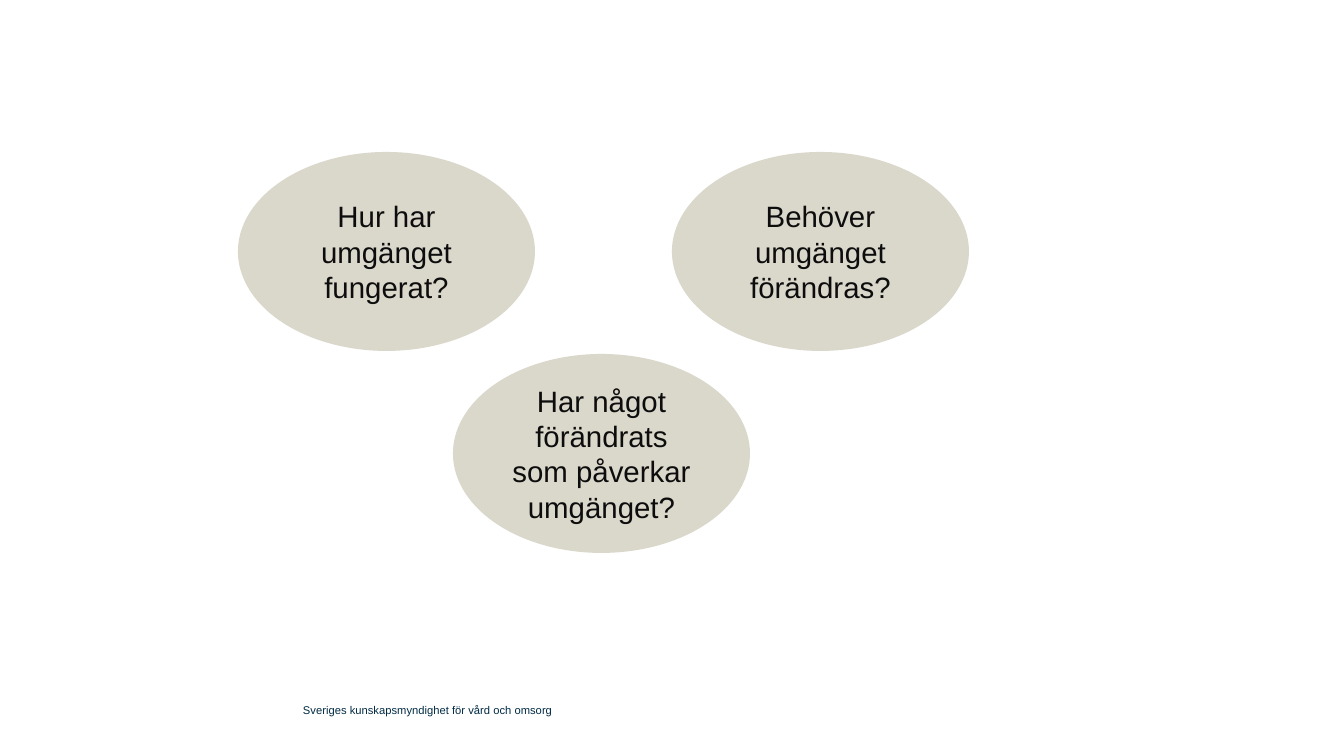
from pptx import Presentation
from pptx.dml.color import RGBColor
from pptx.enum.shapes import MSO_SHAPE as Shape
from pptx.enum.text import MSO_ANCHOR as Anchor, PP_ALIGN as Align
from pptx.util import Emu, Pt

EMU_PER_PX = 914400 / 100.8


def px(length):
    return Emu(round(length * EMU_PER_PX))


def color(code):
    return RGBColor.from_string(code)


class SlideBuilder:
    font = "Arial"
    oval_fill = "DAD7CB"
    oval_text = "0D0D0D"
    footer_text = "002B45"
    oval_size = (297, 199)

    def __init__(self, page):
        self.page = page

    def set_text(self, box, text, size, code, align):
        frame = box.text_frame
        frame.text = text
        frame.word_wrap = True
        frame.vertical_anchor = Anchor.MIDDLE
        para = frame.paragraphs[0]
        para.alignment = align
        for span in para.runs:
            span.font.name = self.font
            span.font.size = Pt(size)
            span.font.color.rgb = color(code)

    def footer(self, text, left, top, width, height):
        box = self.page.shapes.add_textbox(px(left), px(top), px(width), px(height))
        frame = box.text_frame
        frame.margin_left = frame.margin_right = 0
        frame.margin_top = frame.margin_bottom = 0
        self.set_text(box, text, 8, self.footer_text, Align.LEFT)

    def oval(self, text, left, top):
        width, height = self.oval_size
        oval = self.page.shapes.add_shape(
            Shape.OVAL, px(left), px(top), px(width), px(height)
        )
        oval.shadow.inherit = False
        oval.fill.solid()
        oval.fill.fore_color.rgb = color(self.oval_fill)
        oval.line.fill.background()
        self.set_text(oval, text, 21, self.oval_text, Align.CENTER)


def main():
    deck = Presentation()
    deck.slide_width, deck.slide_height = px(1344), px(756)
    builder = SlideBuilder(deck.slides.add_slide(deck.slide_layouts[6]))

    builder.footer("Sveriges kunskapsmyndighet för vård och omsorg", 303, 695, 596, 29)
    questions = [
        ("Hur har umgänget fungerat?", 238, 152),
        ("Behöver umgänget förändras?", 672, 152),
        ("Har något förändrats som påverkar umgänget?", 453, 354),
    ]
    for text, left, top in questions:
        builder.oval(text, left, top)

    deck.save("out.pptx")


if __name__ == "__main__":
    main()
